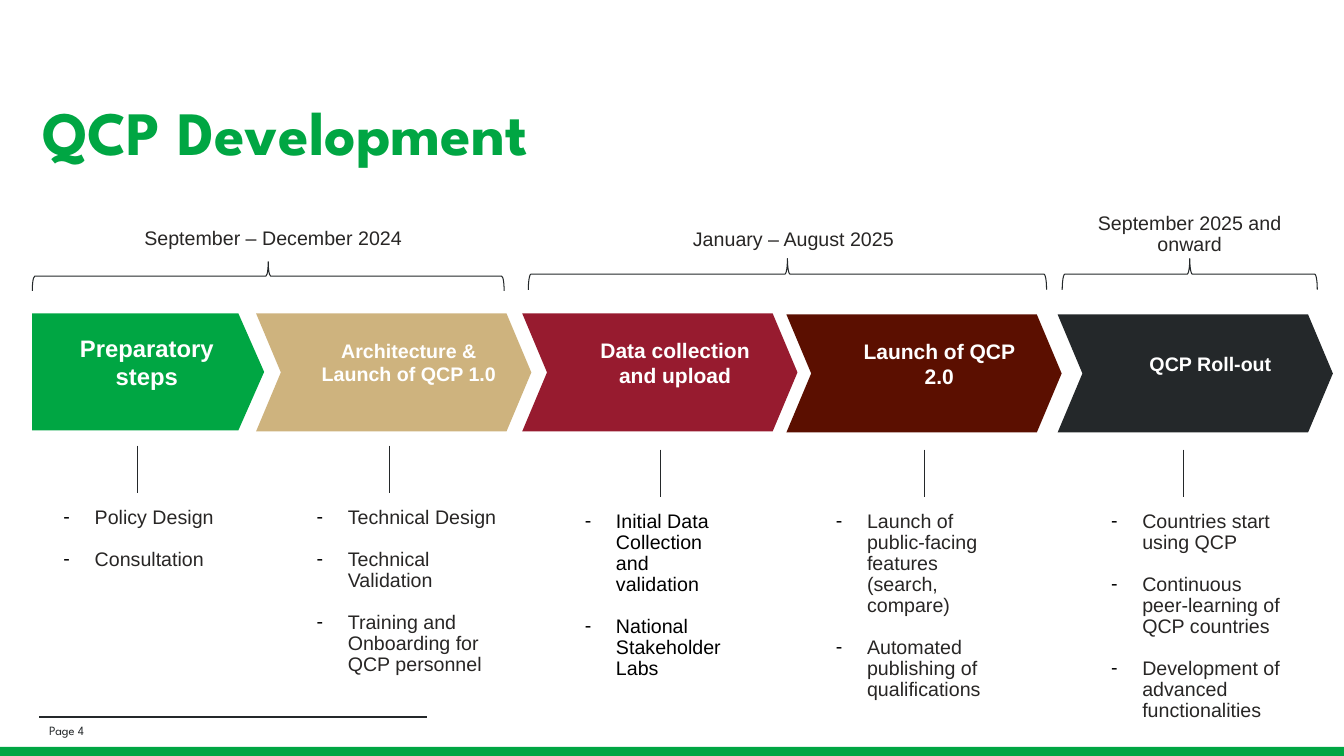
from pptx import Presentation
from pptx.dml.color import RGBColor
from pptx.enum.shapes import MSO_CONNECTOR, MSO_SHAPE
from pptx.enum.text import MSO_ANCHOR, PP_ALIGN
from pptx.oxml.ns import qn
from pptx.util import Inches, Pt
from lxml.etree import SubElement

COLORS = {
    "green": "00A643", "sand": "CEB37E", "red": "971B2F", "brown": "5B0F00",
    "dark": "24282A", "text": "282625", "black": "000000", "white": "FFFFFF",
}
BRAND = "League Spartan"
BODY = "Arial"


class Deck:
    def __init__(self):
        self.prs = Presentation()
        self.prs.slide_width = Inches(13.33)
        self.prs.slide_height = Inches(7.5)
        self.slide = self.prs.slides.add_slide(self.prs.slide_layouts[5])

    def color(self, name):
        return RGBColor.from_string(COLORS[name])

    def style(self, para, size, color, font=BODY, bold=False):
        for run in para.runs:
            run.font.name = font
            run.font.size = Pt(size)
            run.font.bold = bold
            run.font.color.rgb = self.color(color)

    def inset(self, frame, left, top, right, bottom):
        frame.word_wrap = True
        frame.margin_left, frame.margin_top = Inches(left), Inches(top)
        frame.margin_right, frame.margin_bottom = Inches(right), Inches(bottom)

    def title(self, text, x, y, w, h):
        shape = self.slide.shapes.title
        shape.left, shape.top = Inches(x), Inches(y)
        shape.width, shape.height = Inches(w), Inches(h)
        frame = shape.text_frame
        frame.text = text
        frame.vertical_anchor = MSO_ANCHOR.MIDDLE
        self.inset(frame, 0.1, 0.05, 0.1, 0.05)
        para = frame.paragraphs[0]
        para.alignment = PP_ALIGN.LEFT
        para.line_spacing = 0.9
        self.style(para, 44, "green", BRAND, True)

    def shape(self, kind, x, y, w, h, fill=None):
        item = self.slide.shapes.add_shape(
            kind, Inches(x), Inches(y), Inches(w), Inches(h))
        item.shadow.inherit = False
        if fill:
            item.fill.solid()
            item.fill.fore_color.rgb = self.color(fill)
            item.line.fill.background()
        else:
            item.fill.background()
            item.line.color.rgb = self.color("dark")
            item.line.width = Pt(0.75)
        return item

    def line(self, x1, y1, x2, y2, width=0.75):
        item = self.slide.shapes.add_connector(
            MSO_CONNECTOR.STRAIGHT, Inches(x1), Inches(y1), Inches(x2), Inches(y2))
        item.line.color.rgb = self.color("dark")
        item.line.width = Pt(width)
        SubElement(item._element.spPr, qn("a:effectLst"))

    def box(self, text, x, y, w, h):
        item = self.slide.shapes.add_textbox(
            Inches(x), Inches(y), Inches(w), Inches(h))
        item.text_frame.text = text
        return item.text_frame

    def arrow(self, kind, text, x, y, w, h, fill, size, adjust, left):
        item = self.shape(kind, x, y, w, h, fill)
        item.adjustments[0] = adjust
        frame = item.text_frame
        frame.text = text
        frame.vertical_anchor = MSO_ANCHOR.MIDDLE
        self.inset(frame, left, 0, 0.1, 0.2)
        frame.paragraphs[0].alignment = PP_ALIGN.CENTER
        self.style(frame.paragraphs[0], size, "white", bold=True)

    def brace(self, mid, y, span, depth):
        """Draw a brace that points up, centred on (mid, y)."""
        item = self.shape(MSO_SHAPE.LEFT_BRACE, mid - depth / 2, y - span / 2,
                          depth, span)
        item.rotation = 90
        item.adjustments[0] = 0.083
        item.adjustments[1] = 0.5

    def period(self, text, x, y, w):
        frame = self.box(text, x, y, w, 0.38)
        self.inset(frame, 0.53, 0.05, 0.53, 0.13)
        para = frame.paragraphs[0]
        para.alignment = PP_ALIGN.CENTER
        para.line_spacing = 0.89
        self.style(para, 14, "text")

    def dashes(self, items, x, y, w, h, left, color):
        frame = self.box("\n".join(items), x, y, w, h)
        self.inset(frame, left, 0.05, 0.53, 0.13)
        for i, para in enumerate(frame.paragraphs):
            para.line_spacing = 0.89
            if i:
                para.space_before = Pt(15)
            props = para._p.get_or_add_pPr()
            props.set("marL", str(Inches(0.31)))
            props.set("indent", str(-Inches(0.31)))
            tint = SubElement(props, qn("a:buClr"))
            SubElement(tint, qn("a:srgbClr"), val=COLORS["black"])
            SubElement(props, qn("a:buFont"), typeface=BODY)
            SubElement(props, qn("a:buChar"), char="-")
            self.style(para, 14, color)


# text, left, top, width, fill, size
STEPS = [
    ("Preparatory steps", 0.32, 3.11, 2.3, "green", 17),
    ("Architecture & Launch of QCP 1.0", 2.54, 3.11, 2.73, "sand", 14),
    ("Data collection and upload", 5.18, 3.11, 2.73, "red", 15),
    ("Launch of QCP 2.0", 7.8, 3.12, 2.73, "brown", 15),
    ("QCP Roll-out", 10.49, 3.12, 2.73, "dark", 14),
]

# stem x, stem top, text left, width, height, inset, colour, items
NOTES = [
    (1.36, 4.42, 0.1, 2.73, 1.6, 0.53, "text", ["Policy Design", "Consultation"]),
    (3.86, 4.42, 2.61, 2.86, 1.6, 0.53, "text",
     ["Technical Design", "Technical Validation",
      "Training and Onboarding for QCP personnel"]),
    (6.55, 4.46, 5.27, 2.53, 1.2, 0.53, "black",
     ["Initial Data Collection and validation", "National Stakeholder Labs"]),
    (9.17, 4.46, 7.8, 2.73, 2.08, 0.49, "text",
     ["Launch of public-facing features (search, compare)",
      "Automated publishing of qualifications"]),
    (11.74, 4.46, 10.53, 2.73, 2.08, 0.49, "text",
     ["Countries start using QCP", "Continuous peer-learning of QCP countries",
      "Development of advanced functionalities"]),
]

# text, left, top, width, brace middle x, middle y, span, depth
SPANS = [
    ("September – December 2024", 0.42, 2.22, 4.58, 2.66, 2.74, 4.68, 0.29),
    ("January – August 2025", 5.3, 2.23, 5.14, 7.81, 2.72, 5.14, 0.31),
    ("September 2025 and onward", 10.27, 2.07, 3.06, 11.8, 2.72, 2.53, 0.31),
]


def main():
    deck = Deck()
    deck.shape(MSO_SHAPE.RECTANGLE, -0.03, 7.41, 13.4, 0.13, "green")
    deck.line(0.39, 7.11, 4.24, 7.11, 1.5)
    deck.title("QCP Development", 0.32, 0.71, 12.54, 1.26)

    page = deck.box("Page 4", 0.39, 7.16, 3.57, 0.18)
    page.vertical_anchor = MSO_ANCHOR.MIDDLE
    deck.inset(page, 0.1, 0.05, 0.1, 0.05)
    deck.style(page.paragraphs[0], 9, "dark", BRAND)

    for i, (text, x, y, w, fill, size) in enumerate(STEPS):
        if i == 0:
            deck.arrow(MSO_SHAPE.PENTAGON, text, x, y, w, 1.16, fill, size, 0.22, 0.2)
        else:
            deck.arrow(MSO_SHAPE.CHEVRON, text, x, y, w, 1.17, fill, size, 0.21, 0.4)

    for stem, top, x, w, h, left, color, items in NOTES:
        deck.line(stem, top, stem, top + 0.47)
        deck.dashes(items, x, top + 0.57, w, h, left, color)

    for text, x, y, w, mid, level, span, depth in SPANS:
        deck.period(text, x, y, w)
        deck.brace(mid, level, span, depth)

    deck.prs.save("out.pptx")


if __name__ == "__main__":
    main()
